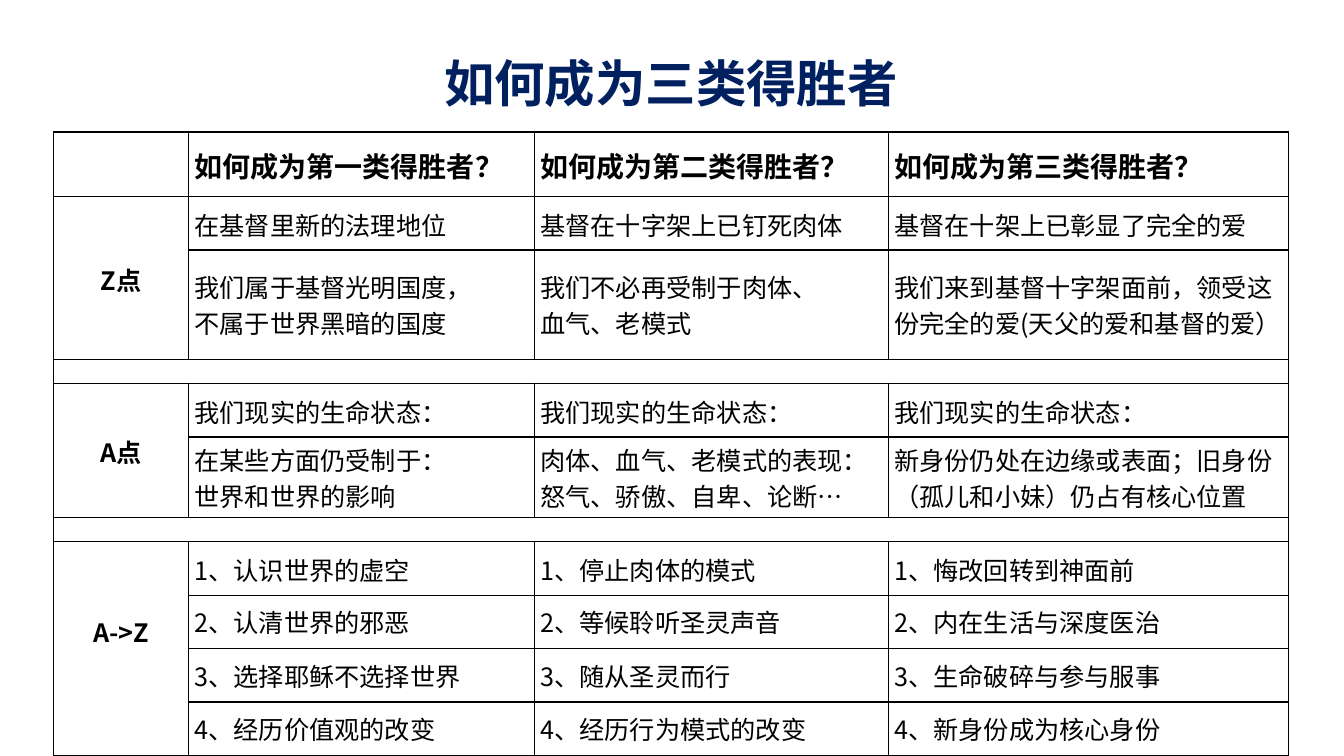
from dataclasses import dataclass

from lxml import etree
from pptx import Presentation
from pptx import util as u
from pptx.dml.color import RGBColor
from pptx.enum import text
from pptx.oxml.ns import qn


@dataclass(frozen=True)
class Theme:
    face: str = "Noto Sans CJK SC"
    navy: str = "002060"
    ink: str = "000000"
    title: int = 36
    head: int = 20
    body: int = 18
    gap: int = 8
    rule: int = 1


THEME = Theme()
COLS = [1.34, 3.43, 3.51, 3.97]
HEAD, ITEM, PAIR, GAP = 0.64, 0.53, 0.8, 0.24
HEADS = [f"如何成为第{n}类得胜者？" for n in "一二三"]
STATE = ["我们现实的生命状态："] * 3
# Each group: label, then rows of (height, texts)
GROUPS = [
    ("Z点", [
        (ITEM, ["在基督里新的法理地位", "基督在十字架上已钉死肉体",
                "基督在十架上已彰显了完全的爱"]),
        (PAIR, ["我们属于基督光明国度，\v不属于世界黑暗的国度",
                "我们不必再受制于肉体、\v血气、老模式",
                "我们来到基督十字架面前，领受这份完全的爱(天父的爱和基督的爱）"]),
    ]),
    ("A点", [
        (ITEM, STATE),
        (PAIR, ["在某些方面仍受制于：\v世界和世界的影响",
                "肉体、血气、老模式的表现：\v怒气、骄傲、自卑、论断…",
                "新身份仍处在边缘或表面；旧身份（孤儿和小妹）仍占有核心位置"]),
    ]),
    ("A->Z", [
        (ITEM, [f"{n}、{step}" for step in steps])
        for n, steps in enumerate([
            ["认识世界的虚空", "停止肉体的模式", "悔改回转到神面前"],
            ["认清世界的邪恶", "等候聆听圣灵声音", "内在生活与深度医治"],
            ["选择耶稣不选择世界", "随从圣灵而行", "生命破碎与参与服事"],
            ["经历价值观的改变", "经历行为模式的改变", "新身份成为核心身份"],
        ], 1)
    ]),
]


def style(par, size, color, bold=False):
    """Set the font for Latin and East Asian text alike."""
    font = par.font
    font.name, font.size, font.bold = THEME.face, u.Pt(size), bold
    font.color.rgb = RGBColor.from_string(color)
    face = etree.Element(qn("a:ea"), typeface=THEME.face)
    font._element.find(qn("a:latin")).addnext(face)


def border(cell):
    props = cell._tc.get_or_add_tcPr()
    for n, side in enumerate(("lnL", "lnR", "lnT", "lnB")):
        line = etree.Element(qn("a:" + side), w=str(u.Pt(THEME.rule)))
        fill = etree.SubElement(line, qn("a:solidFill"))
        etree.SubElement(fill, qn("a:srgbClr"), val=THEME.ink)
        props.insert(n, line)


def write(cell, words, size=THEME.body, bold=False, center=False, lead=1.0):
    cell.text = words
    par = cell.text_frame.paragraphs[0]
    par.line_spacing = lead
    par.alignment = text.PP_ALIGN.CENTER if center else text.PP_ALIGN.LEFT
    style(par, size, THEME.ink, bold)
    if not words:
        etree.SubElement(par._p, qn("a:endParaRPr"), sz=str(size * 100))


def add_title(slide, box):
    title = slide.shapes.title
    title.left, title.top, title.width, title.height = map(u.Inches, box)
    frame = title.text_frame
    frame.text = "如何成为三类得胜者"
    frame.word_wrap = True
    frame.vertical_anchor = text.MSO_ANCHOR.MIDDLE
    par = frame.paragraphs[0]
    par.alignment, par.line_spacing = text.PP_ALIGN.CENTER, 0.9
    style(par, THEME.title, THEME.navy, True)


def add_grid(slide, box):
    highs = [HEAD]
    for n, (_, rows) in enumerate(GROUPS):
        highs += [GAP] * (n > 0) + [high for high, _ in rows]
    frame = slide.shapes.add_table(len(highs), len(COLS), *map(u.Inches, box))
    grid = frame.table
    grid.first_row = grid.horz_banding = False
    for col, wide in zip(grid.columns, COLS):
        col.width = u.Inches(box[2] * wide / sum(COLS))
    for row, high in zip(grid.rows, highs):
        row.height = u.Inches(high)
    for cell in grid.iter_cells():
        cell.fill.background()
        border(cell)
        cell.margin_left = cell.margin_right = u.Inches(0.06)
        cell.margin_top = cell.margin_bottom = 0
        cell.vertical_anchor = text.MSO_ANCHOR.MIDDLE

    for c, words in enumerate(HEADS, 1):
        write(grid.cell(0, c), words, THEME.head, True, lead=1.07)
    r = 1
    for n, (label, rows) in enumerate(GROUPS):
        if n:
            for c in range(len(COLS)):
                write(grid.cell(r, c), "", THEME.gap)
            grid.cell(r, 0).merge(grid.cell(r, len(COLS) - 1))
            r += 1
        name = grid.cell(r, 0)
        name.merge(grid.cell(r + len(rows) - 1, 0))
        write(name, label, bold=True, center=True, lead=1.07)
        if len(rows) > 2:
            name.margin_bottom = u.Inches(0.36)
        for k, (_, words) in enumerate(rows):
            for c, item in enumerate(words, 1):
                write(grid.cell(r + k, c), item, lead=1 if k else 1.07)
        r += len(rows)


def main():
    deck = Presentation()
    deck.slide_width, deck.slide_height = u.Inches(13.33), u.Inches(7.5)
    slide = deck.slides.add_slide(deck.slide_layouts[5])
    add_title(slide, (0.81, 0.4, 11.69, 0.91))
    add_grid(slide, (0.53, 1.31, 12.25, 5.81))
    deck.save("out.pptx")


if __name__ == "__main__":
    main()
